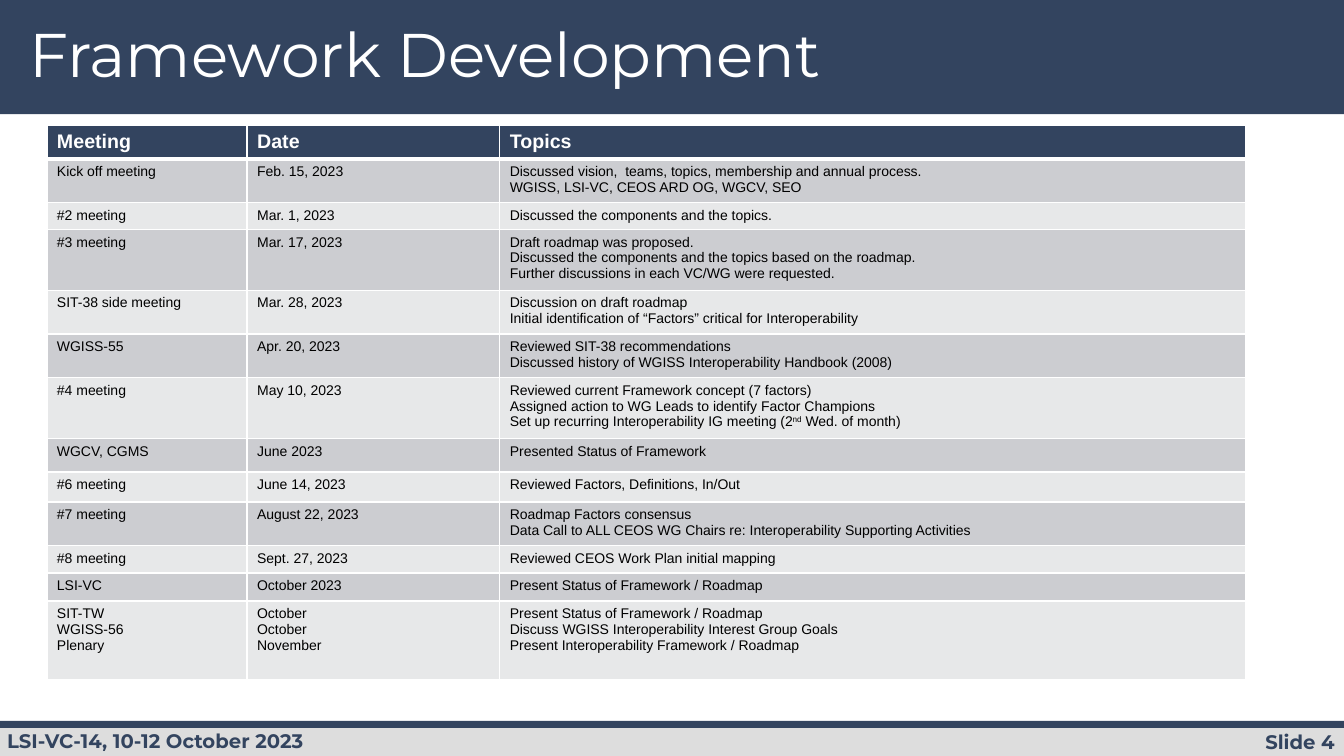
from lxml import etree
from pptx import Presentation
from pptx.dml.color import RGBColor
from pptx.enum import shapes, text
from pptx.oxml import ns
from pptx.util import Pt

NAVY = RGBColor(0x33, 0x44, 0x5F)
WHITE = RGBColor(0xFF, 0xFF, 0xFF)
BLACK = RGBColor(0, 0, 0)
FOOTER_GREY = RGBColor(0xDD, 0xDD, 0xDD)
BANDS = [RGBColor(0xCC, 0xCD, 0xD1), RGBColor(0xE7, 0xE8, 0xE9)]

HEADER_FONT = {"name": "Arial", "size": Pt(14), "bold": True}
BODY_FONT = {"name": "Arial", "size": Pt(10), "bold": False}
FOOTER_FONT = {"name": "Montserrat", "size": Pt(14), "bold": True}
TITLE_FONT = {"name": "Montserrat", "size": Pt(44), "bold": False}


def add_run(p, content, font, color):
    r = p.add_run()
    r.text = content
    for key, value in font.items():
        setattr(r.font, key, value)
    r.font.color.rgb = color
    return r


def add_border(cell, side, width):
    ln = etree.SubElement(cell._tc.get_or_add_tcPr(), ns.qn("a:" + side), w=str(Pt(width)))
    fill = etree.SubElement(ln, ns.qn("a:solidFill"))
    etree.SubElement(fill, ns.qn("a:srgbClr"), val=str(WHITE))


prs = Presentation()
prs.slide_width, prs.slide_height = Pt(960), Pt(540)
s = prs.slides.add_slide(prs.slide_layouts[6])

# Title band and footer bars
for top, height, color in [(0, 81.5, NAVY), (517.5, 22.5, FOOTER_GREY), (515, 5, NAVY)]:
    sp = s.shapes.add_shape(shapes.MSO_SHAPE.RECTANGLE, 0, Pt(top), Pt(960), Pt(height))
    sp.shadow.inherit = False
    sp.fill.solid()
    sp.fill.fore_color.rgb = color
    sp.line.fill.background()

# Title and footer texts
LEFT, RIGHT = text.PP_ALIGN.LEFT, text.PP_ALIGN.RIGHT
for content, box, font, color, align, spacing in [
    ("Slide 4", (808.5, 517.5, 152, 24.5), FOOTER_FONT, NAVY, RIGHT, 1),
    ("LSI-VC-14, 10-12 October 2023", (-2, 517, 388, 24.5), FOOTER_FONT, NAVY, LEFT, 1),
    ("Framework Development", (14, 13.5, 739.5, 61), TITLE_FONT, WHITE, LEFT, 0.9),
]:
    tf = s.shapes.add_textbox(*map(Pt, box)).text_frame
    tf.word_wrap = True
    p = tf.paragraphs[0]
    p.alignment = align
    p.line_spacing = spacing
    add_run(p, content, font, color)

# Meeting table: row height, then the three cells
ROWS = [
    (23, "Meeting", "Date", "Topics"),
    (29, "Kick off meeting", "Feb. 15, 2023",
     "Discussed vision,  teams, topics, membership and annual process.\n"
     "WGISS, LSI-VC, CEOS ARD OG, WGCV, SEO"),
    (18, "#2 meeting", "Mar. 1, 2023", "Discussed the components and the topics."),
    (40.5, "#3 meeting", "Mar. 17, 2023",
     "Draft roadmap was proposed.\n"
     "Discussed the components and the topics based on the roadmap.\n"
     "Further discussions in each VC/WG were requested."),
    (29, "SIT-38 side meeting", "Mar. 28, 2023",
     "Discussion on draft roadmap\n"
     "Initial identification of “Factors” critical for Interoperability"),
    (29.5, "WGISS-55", "Apr. 20, 2023",
     "Reviewed SIT-38 recommendations\n"
     "Discussed history of WGISS Interoperability Handbook (2008)"),
    (40.5, "#4 meeting", "May 10, 2023",
     "Reviewed current Framework concept (7 factors)\n"
     "Assigned action to WG Leads to identify Factor Champions\n"
     "Set up recurring Interoperability IG meeting (2^nd^ Wed. of month)"),
    (24, "WGCV, CGMS", "June 2023", "Presented Status of Framework"),
    (21.5, "#6 meeting", "June 14, 2023", "Reviewed Factors, Definitions, In/Out"),
    (29, "#7 meeting", "August 22, 2023",
     "Roadmap Factors consensus\n"
     "Data Call to ALL CEOS WG Chairs re: Interoperability Supporting Activities"),
    (19.5, "#8 meeting", "Sept. 27, 2023", "Reviewed CEOS Work Plan initial mapping"),
    (20, "LSI-VC", "October 2023", "Present Status of Framework / Roadmap"),
    (56, "SIT-TW\nWGISS-56\nPlenary", "October\nOctober\nNovember",
     "Present Status of Framework / Roadmap\n"
     "Discuss WGISS Interoperability Interest Group Goals\n"
     "Present Interoperability Framework / Roadmap"),
]
COLUMNS = [143, 180.5, 533]
table = s.shapes.add_table(len(ROWS), len(COLUMNS), Pt(33.5), Pt(89.5), Pt(sum(COLUMNS)),
                           Pt(sum(row[0] for row in ROWS))).table
for column, width in zip(table.columns, COLUMNS):
    column.width = Pt(width)

for i, (height, *contents) in enumerate(ROWS):
    table.rows[i].height = Pt(height)
    header = i == 0
    font, color = (HEADER_FONT, WHITE) if header else (BODY_FONT, BLACK)
    for cell, content in zip(table.rows[i].cells, contents):
        # Borders precede the fill in the cell properties
        for side in ("lnL", "lnR", "lnT", "lnB"):
            thick = (header and side == "lnB") or (i == 1 and side == "lnT")
            add_border(cell, side, 3 if thick else 1)
        cell.fill.solid()
        cell.fill.fore_color.rgb = NAVY if header else BANDS[(i - 1) % 2]
        tf = cell.text_frame
        for n, line in enumerate(content.split("\n")):
            p = tf.add_paragraph() if n else tf.paragraphs[0]
            # Text between carets is superscript
            for k, part in enumerate(line.split("^")):
                r = add_run(p, part, font, color)
                if k % 2:
                    r._r.get_or_add_rPr().set("baseline", "30000")

prs.save("out.pptx")
